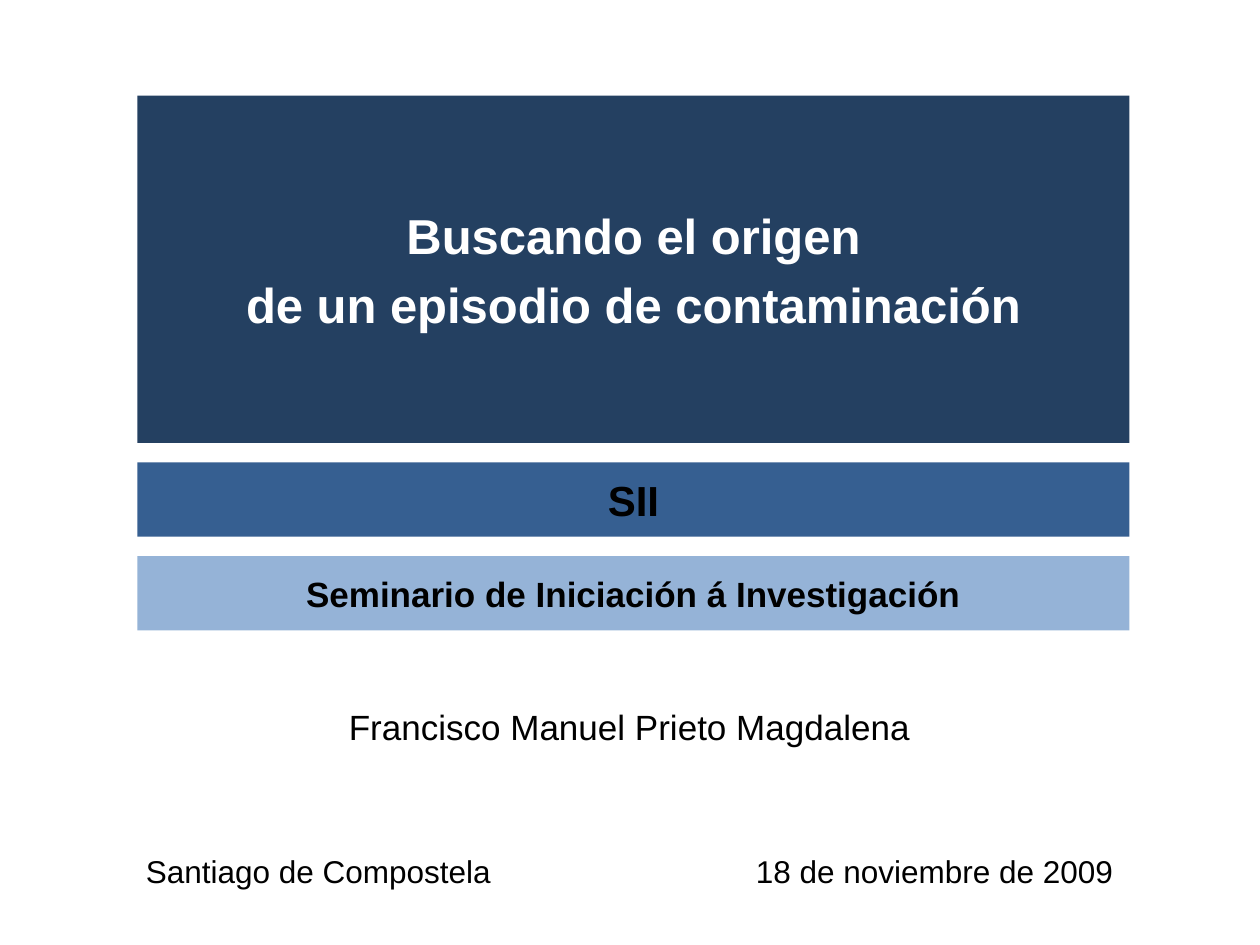
"""Build the cover slide of a seminar talk."""
from dataclasses import dataclass

from pptx import Presentation
from pptx.dml.color import RGBColor
from pptx.enum.shapes import MSO_SHAPE
from pptx.enum.text import MSO_ANCHOR, MSO_AUTO_SIZE, PP_ALIGN
from pptx.util import Cm, Pt

LEFT, TOP, WIDTH, GAP = 2.77, 1.93, 20, 0.39


@dataclass
class Band:
    text: str
    high: float
    fill: str
    size: int
    ink: str = "000000"


@dataclass
class Note:
    text: str
    left: float
    top: float
    wide: float
    high: float
    size: int
    align: PP_ALIGN
    wrap: bool = False


BANDS = [
    Band("Buscando el origen\nde un episodio de contaminación", 7, "244061", 28, "FFFFFF"),
    Band("SII", 1.5, "365F91", 24),
    Band("Seminario de Iniciación á Investigación", 1.5, "95B3D7", 20),
]
NOTES = [
    Note("Francisco Manuel Prieto Magdalena", 2.69, 13.89, WIDTH, 1.5, 20, PP_ALIGN.CENTER, True),
    Note("Santiago de Compostela", 2.69, 17.04, 7.52, 1.02, 18, PP_ALIGN.LEFT),
    Note("18 de noviembre de 2009", 14.91, 17.04, 7.78, 1.02, 18, PP_ALIGN.RIGHT),
]


def color(code: str) -> RGBColor:
    return RGBColor.from_string(code)


def write(shape, text: str, size: int, ink: str, bold: bool, align: PP_ALIGN, wrap: bool) -> None:
    frame = shape.text_frame
    frame.text = text
    frame.word_wrap = wrap
    frame.auto_size = MSO_AUTO_SIZE.NONE if wrap else MSO_AUTO_SIZE.SHAPE_TO_FIT_TEXT
    frame.vertical_anchor = MSO_ANCHOR.MIDDLE
    for para in frame.paragraphs:
        para.alignment = align
        para.space_after = Pt(6)
        for run in para.runs:
            font = run.font
            font.name, font.size, font.bold = "Arial", Pt(size), bold
            font.color.rgb = color(ink)


def draw_band(shape, band: Band, top: float) -> None:
    shape.left, shape.top = Cm(LEFT), Cm(top)
    shape.width, shape.height = Cm(WIDTH), Cm(band.high)
    shape.fill.solid()
    shape.fill.fore_color.rgb = color(band.fill)
    shape.line.fill.background()
    write(shape, band.text, band.size, band.ink, True, PP_ALIGN.CENTER, True)


def draw_note(slide, note: Note) -> None:
    box = slide.shapes.add_textbox(Cm(note.left), Cm(note.top), Cm(note.wide), Cm(note.high))
    write(box, note.text, note.size, "000000", False, note.align, note.wrap)


def main() -> None:
    deck = Presentation()
    deck.slide_width, deck.slide_height = Cm(25.4), Cm(19.05)
    slide = deck.slides.add_slide(deck.slide_layouts[5])
    top = TOP
    for band in BANDS:
        if band is BANDS[0]:
            shape = slide.shapes.title
        else:
            shape = slide.shapes.add_shape(MSO_SHAPE.RECTANGLE, 0, 0, 0, 0)
            shape.shadow.inherit = False
        draw_band(shape, band, top)
        top += band.high + GAP
    for note in NOTES:
        draw_note(slide, note)
    deck.save("out.pptx")


if __name__ == "__main__":
    main()
